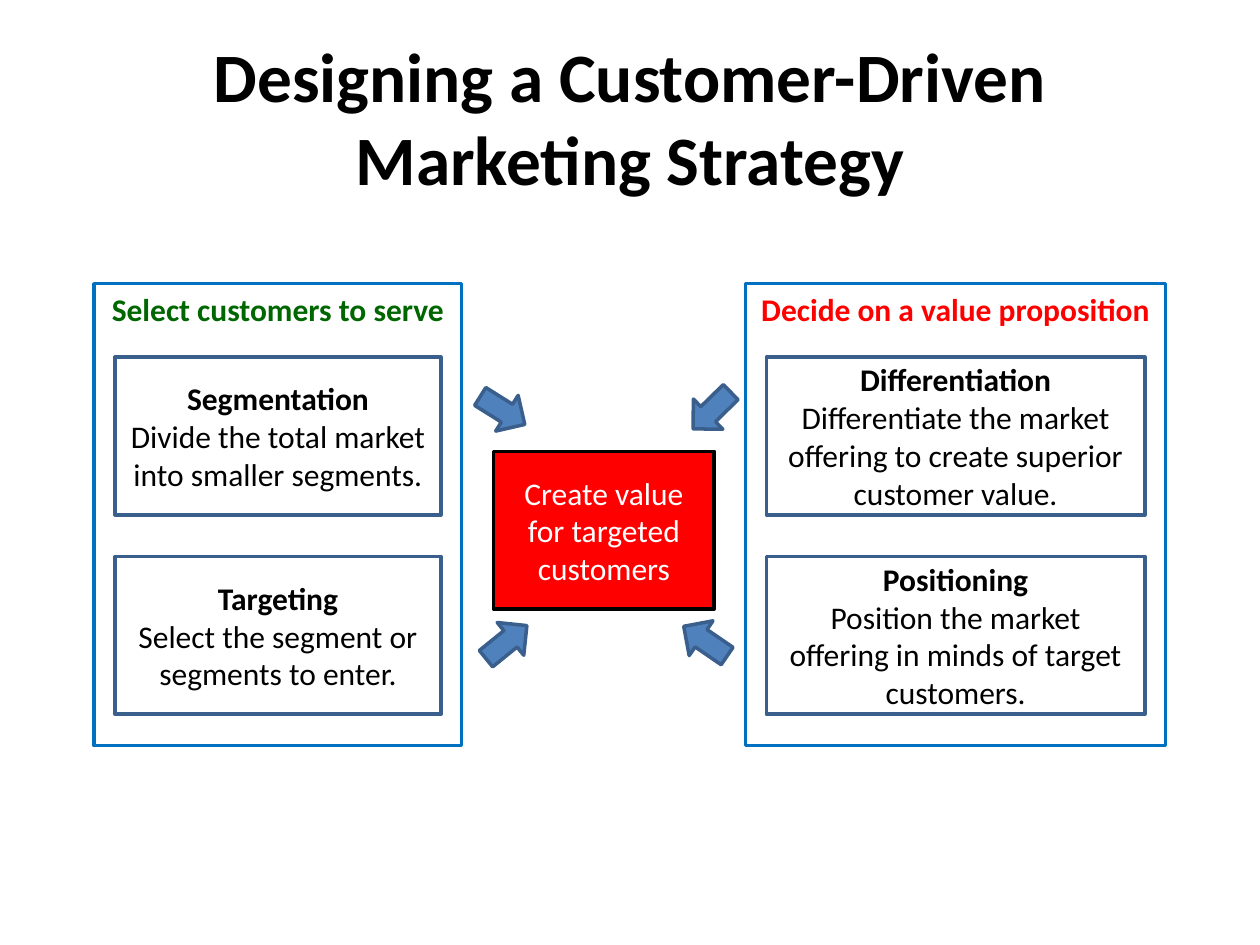
from pptx import Presentation
from pptx.dml.color import RGBColor
from pptx.enum.shapes import MSO_SHAPE
from pptx.enum.text import MSO_ANCHOR, MSO_AUTO_SIZE, PP_ALIGN
from pptx.util import Cm, Pt

RECT, ARROW = MSO_SHAPE.RECTANGLE, MSO_SHAPE.RIGHT_ARROW
TOP, MIDDLE = MSO_ANCHOR.TOP, MSO_ANCHOR.MIDDLE
CENTER, NO_FIT = PP_ALIGN.CENTER, MSO_AUTO_SIZE.NONE

# Content
TITLE = "Designing a Customer-Driven Marketing Strategy"
PANELS = [
    {"left": 1.9, "width": 7.41, "head": "Select customers to serve", "color": "green",
     "cards": [("Segmentation", "Divide the total market into smaller segments."),
               ("Targeting", "Select the segment or segments to enter.")]},
    {"left": 15.03, "width": 8.47, "head": "Decide on a value proposition", "color": "red",
     "cards": [("Differentiation",
                "Differentiate the market offering to create superior customer value."),
               ("Positioning",
                "Position the market offering in minds of target customers.")]},
]
GOAL = "Create value for targeted customers"
ARROWS = [(9.6, 7.85, 32.1), (9.68, 12.52, 321), (13.82, 7.85, 135.7), (13.69, 12.5, 214.4)]

# Theme and layout, lengths in cm
THEME = {
    "font": "Calibri", "title": 39.6, "body": 18, "line": 2,
    "black": "000000", "white": "FFFFFF", "red": "FF0000", "green": "006600",
    "frame": "0070C0", "edge": "3A5F8C", "arrow": "4F81BD",
}
PANEL_TOP, PANEL_HIGH = 5.72, 9.31
CARD_TOP, CARD_HIGH, CARD_STEP, INSET = 7.2, 3.18, 4.02, 0.42
GOAL_BOX = (9.95, 9.1, 4.45, CARD_HIGH)
ARROW_SIZE = (1.06, 0.85)


def tint(name):
    return RGBColor.from_string(THEME[name])


def write(shape, lines, anchor=MIDDLE):
    """Fill a shape with (text, size, color, bold) paragraphs."""
    frame = shape.text_frame
    form = {"word_wrap": True, "auto_size": NO_FIT, "vertical_anchor": anchor}
    for key, value in form.items():
        setattr(frame, key, value)
    for i, (text, size, color, bold) in enumerate(lines):
        para = frame.add_paragraph() if i else frame.paragraphs[0]
        para.alignment = CENTER
        run = para.add_run()
        run.text = text
        look = {"name": THEME["font"], "size": Pt(THEME[size]), "bold": bold}
        for key, value in look.items():
            setattr(run.font, key, value)
        run.font.color.rgb = tint(color)


def draw(slide, kind, box, fill, line):
    shape = slide.shapes.add_shape(kind, *map(Cm, box))
    shape.shadow.inherit = False
    if fill:
        shape.fill.solid()
        shape.fill.fore_color.rgb = tint(fill)
    else:
        shape.fill.background()
    shape.line.color.rgb = tint(line)
    shape.line.width = Pt(THEME["line"])
    return shape


def main():
    deck = Presentation()
    deck.slide_width, deck.slide_height = Cm(25.4), Cm(19.05)
    slide = deck.slides.add_slide(deck.slide_layouts[5])

    # Title
    title = slide.shapes.title
    place = {"left": 1.27, "top": 0.76, "width": 22.86, "height": 3.18}
    for key, value in place.items():
        setattr(title, key, Cm(value))
    write(title, [(TITLE, "title", "black", True)])

    # Panels with their cards
    for panel in PANELS:
        left, width = panel["left"], panel["width"]
        box = draw(slide, RECT, (left, PANEL_TOP, width, PANEL_HIGH), "white", "frame")
        write(box, [(panel["head"], "body", panel["color"], True)], TOP)
        for row, (name, text) in enumerate(panel["cards"]):
            spot = (left + INSET, CARD_TOP + row * CARD_STEP, width - 2 * INSET, CARD_HIGH)
            card = draw(slide, RECT, spot, None, "edge")
            write(card, [(name, "body", "black", True), (text, "body", "black", False)])

    # Goal in the centre
    goal = draw(slide, RECT, GOAL_BOX, "red", "black")
    write(goal, [(GOAL, "body", "white", False)])

    # Arrows toward the goal
    for left, top, angle in ARROWS:
        arrow = draw(slide, ARROW, (left, top, *ARROW_SIZE), "arrow", "edge")
        arrow.rotation = angle

    deck.save("out.pptx")


if __name__ == "__main__":
    main()
